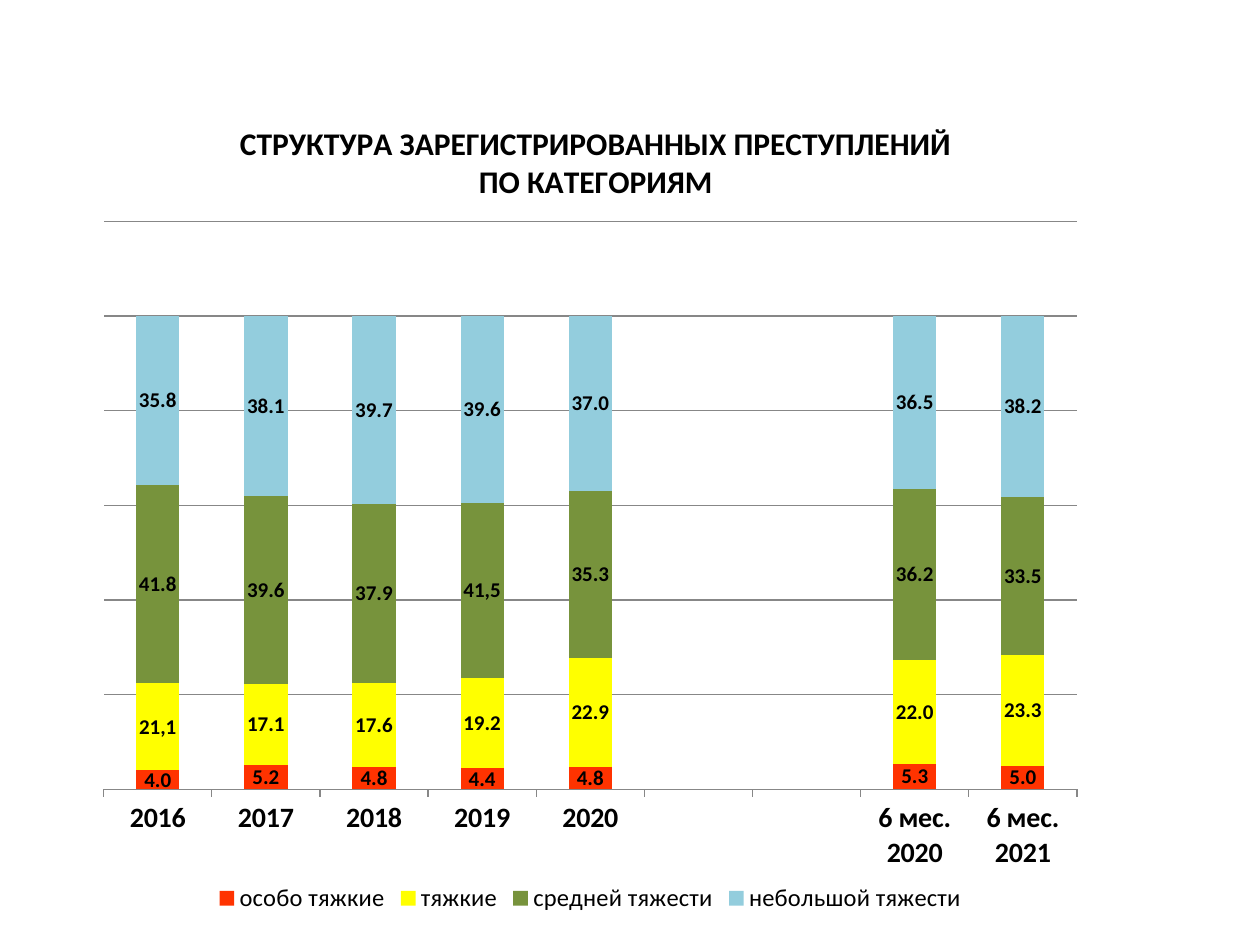
"""Build a slide with a stacked column chart of registered crimes by category."""
from lxml.etree import SubElement
from pptx import Presentation
from pptx.chart.data import CategoryChartData
from pptx.dml.color import RGBColor
from pptx.enum.chart import XL_CHART_TYPE, XL_LABEL_POSITION, XL_LEGEND_POSITION, XL_TICK_MARK
from pptx.oxml.ns import qn
from pptx.util import Inches, Pt

COLORS = {
    "text": "000000",
    "grid": "878787",
    "особо тяжкие": "FF3300",
    "тяжкие": "FFFF00",
    "средней тяжести": "77933C",
    "небольшой тяжести": "93CDDD",
}
CATEGORIES = ["2016", "2017", "2018", "2019", "2020", "", "", "6 мес. 2020", "6 мес. 2021"]
SHARES = {
    "особо тяжкие": [4.0, 5.2, 4.8, 4.4, 4.8, None, None, 5.3, 5.0],
    "тяжкие": [18.4, 17.1, 17.6, 19.2, 22.9, None, None, 22.0, 23.3],
    "средней тяжести": [41.8, 39.6, 37.9, 36.8, 35.3, None, None, 36.2, 33.5],
    "небольшой тяжести": [35.8, 38.1, 39.7, 39.6, 37.0, None, None, 36.5, 38.2],
}
CUSTOM_LABELS = {"тяжкие": (0, "21,1"), "средней тяжести": (3, "41,5")}
TITLE = "СТРУКТУРА ЗАРЕГИСТРИРОВАННЫХ ПРЕСТУПЛЕНИЙ\nПО КАТЕГОРИЯМ"


def style_font(font, size, bold=False):
    values = {"name": "Calibri", "size": Pt(size), "bold": bold}
    for name, value in values.items():
        setattr(font, name, value)
    font.color.rgb = RGBColor.from_string(COLORS["text"])


def place(element, values):
    layout = element.find(qn("c:layout"))
    if layout is None:
        layout = element.makeelement(qn("c:layout"))
        text = element.find(qn("c:tx"))
        element.insert(0 if text is None else 1, layout)
    for child in list(layout):
        layout.remove(child)
    manual = SubElement(layout, qn("c:manualLayout"))
    for name, value in values.items():
        SubElement(manual, qn(f"c:{name}")).set("val", str(value))


deck = Presentation()
deck.slide_width, deck.slide_height = Inches(10), Inches(7.5)
page = deck.slides.add_slide(deck.slide_layouts[6])

chart_data = CategoryChartData(number_format="0.0")
chart_data.categories = CATEGORIES
for name, values in SHARES.items():
    chart_data.add_series(name, values)
chart = page.shapes.add_chart(
    XL_CHART_TYPE.COLUMN_STACKED,
    Inches(0.67), Inches(0.68), Inches(8.03), Inches(6.61), chart_data,
).chart
style_font(chart.font, 18)

chart.has_title = True
title = chart.chart_title
title.include_in_layout = False
title.text_frame.text = TITLE
for para in title.text_frame.paragraphs:
    style_font(para.font, 18, True)
    for span in para.runs:
        style_font(span.font, 18, True)

edges = {"xMode": "edge", "yMode": "edge"}
place(title._element, {**edges, "x": 0.15, "y": 0.04})
place(chart._chartSpace.chart.plotArea,
      {"layoutTarget": "inner", **edges, "x": 0.019, "y": 0.163, "w": 0.962, "h": 0.682})

chart.has_legend = True
chart.legend.position = XL_LEGEND_POSITION.BOTTOM
chart.legend.include_in_layout = False
style_font(chart.legend.font, 14)

category_axis = chart.category_axis
category_axis.major_tick_mark = XL_TICK_MARK.OUTSIDE
style_font(category_axis.tick_labels.font, 16, True)
value_axis = chart.value_axis
axis_format = {"minimum_scale": 0, "maximum_scale": 120, "major_unit": 20,
               "has_major_gridlines": True, "visible": False}
for name, value in axis_format.items():
    setattr(value_axis, name, value)
value_axis.tick_labels.number_format = "0.0"
value_axis.tick_labels.number_format_is_linked = False
for line in (category_axis.format.line, value_axis.major_gridlines.format.line):
    line.color.rgb = RGBColor.from_string(COLORS["grid"])
    line.width = Pt(0.75)

plot = chart.plots[0]
plot.gap_width, plot.overlap, plot.vary_by_categories = 150, 100, False
label_format = {"show_value": True, "position": XL_LABEL_POSITION.CENTER,
                "number_format": "0.0", "number_format_is_linked": False}
for series in plot.series:
    series.format.fill.solid()
    series.format.fill.fore_color.rgb = RGBColor.from_string(COLORS[series.name])
    labels = series.data_labels
    for name, value in label_format.items():
        setattr(labels, name, value)
    style_font(labels.font, 12, True)
    if series.name in CUSTOM_LABELS:
        index, text = CUSTOM_LABELS[series.name]
        label = series.points[index].data_label
        label.text_frame.text = text
        style_font(label.text_frame.paragraphs[0].runs[0].font, 12, True)
        label.position = XL_LABEL_POSITION.CENTER

deck.save("out.pptx")
